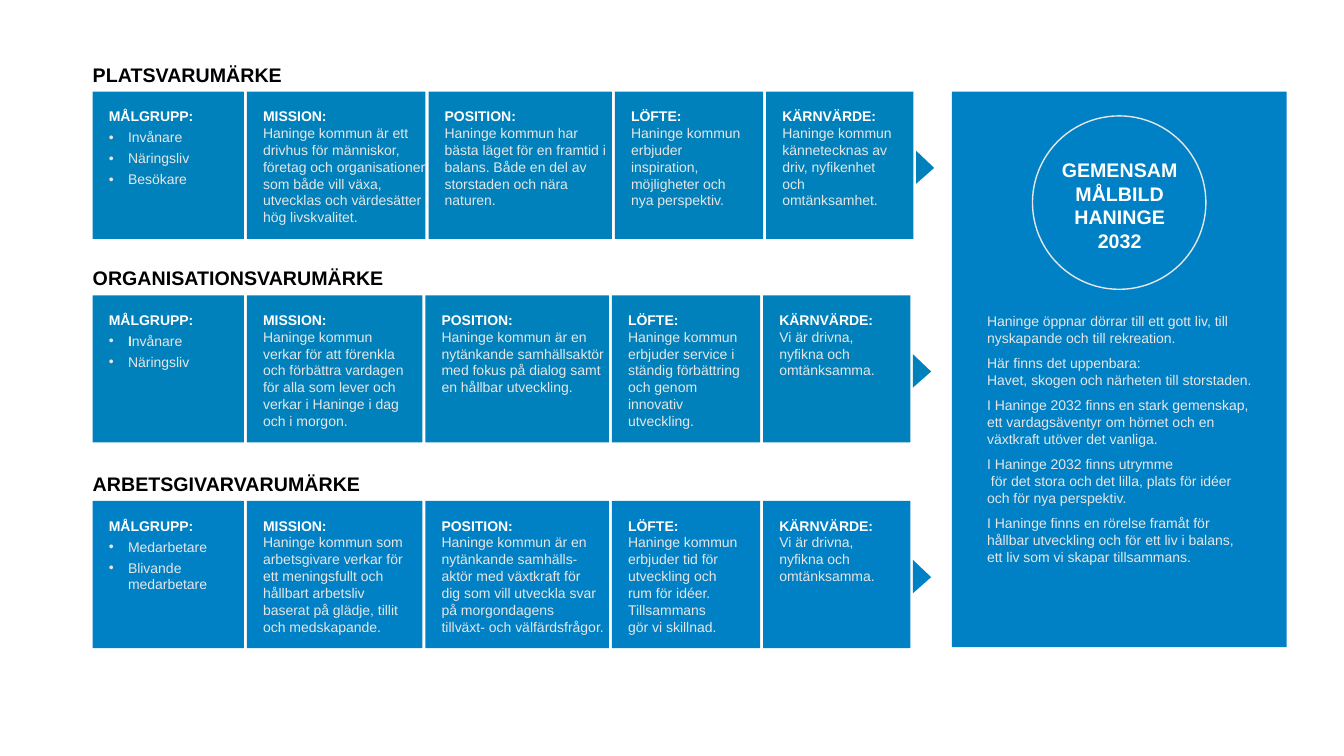
from dataclasses import dataclass

from lxml.etree import SubElement
from pptx import Presentation
from pptx.dml.color import RGBColor
from pptx.enum.shapes import MSO_SHAPE as Shape
from pptx.enum.text import MSO_ANCHOR as Anchor, MSO_AUTO_SIZE as AutoSize, PP_ALIGN as Align
from pptx.oxml.ns import qn
from pptx.util import Emu, Pt

PX = 9144  # 100 px to the inch
FONT = "Arial"
BLUE = RGBColor(0x00, 0x81, 0xBB)
BRIGHT_BLUE = RGBColor(0x00, 0x81, 0xC5)
WHITE = RGBColor(0xFF, 0xFF, 0xFF)
BLACK = RGBColor(0x00, 0x00, 0x00)
PALE = RGBColor(0xE7, 0xE6, 0xE6)

LEFT, GAP, CARD_HEIGHT, PAD, NARROW_PAD = 92, 3, 146, 16, 4
CARD_WIDTHS = (150, 174, 182, 147, 146)
LABELS = ("MISSION:", "POSITION:", "LÖFTE:", "KÄRNVÄRDE:")


@dataclass
class Brand:
    name: str
    top: int
    color: RGBColor
    audiences: tuple[str, ...]
    statements: tuple[str, str, str, str]
    mission_width: int = CARD_WIDTHS[1]
    mission_pad: int = PAD
    bold_initial: bool = False


BRANDS = (
    Brand(
        "PLATSVARUMÄRKE", 91, BLUE, ("Invånare", "Näringsliv", "Besökare"),
        ("Haninge kommun är ett drivhus för människor, företag och organisationer "
         "som både vill växa, utvecklas och värdesätter hög livskvalitet.",
         "Haninge kommun har bästa läget för en framtid i balans. "
         "Både en del av storstaden och nära naturen.",
         "Haninge kommun erbjuder inspiration, möjligheter och nya perspektiv.",
         "Haninge kommun kännetecknas av driv, nyfikenhet och omtänksamhet."),
        mission_width=177, mission_pad=0,
    ),
    Brand(
        "ORGANISATIONSVARUMÄRKE", 293, BLUE, ("Invånare", "Näringsliv"),
        ("Haninge kommun verkar för att förenkla och förbättra vardagen "
         "för alla som lever och verkar i Haninge i dag och i morgon.",
         "Haninge kommun är en nytänkande samhällsaktör med fokus på dialog "
         "samt en hållbar utveckling.",
         "Haninge kommun erbjuder service i ständig förbättring och genom "
         "innovativ utveckling.",
         "Vi är drivna, nyfikna och omtänksamma."),
        bold_initial=True,
    ),
    Brand(
        "ARBETSGIVARVARUMÄRKE", 497, BRIGHT_BLUE, ("Medarbetare", "Blivande medarbetare"),
        ("Haninge kommun som arbetsgivare verkar för ett meningsfullt och "
         "hållbart arbetsliv baserat på glädje, tillit och medskapande.",
         "Haninge kommun är en nytänkande samhälls- aktör med växtkraft för\n"
         "dig som vill utveckla svar på morgondagens\ntillväxt- och välfärdsfrågor.",
         "Haninge kommun erbjuder tid för utveckling och\nrum för idéer. Tillsammans\n"
         "gör vi skillnad.",
         "Vi är drivna, nyfikna och omtänksamma."),
    ),
)

VISION = (
    "Haninge öppnar dörrar till ett gott liv, till nyskapande och till rekreation.",
    "Här finns det uppenbara:\nHavet, skogen och närheten till storstaden.",
    "I Haninge 2032 finns en stark gemenskap, ett vardagsäventyr om hörnet "
    "och en växtkraft utöver det vanliga.",
    "I Haninge 2032 finns utrymme\n för det stora och det lilla, plats för idéer\n"
    "och för nya perspektiv.",
    "I Haninge finns en rörelse framåt för\nhållbar utveckling och för ett liv i balans,\n"
    "ett liv som vi skapar tillsammans.",
)


def area(*lengths: int) -> list[Emu]:
    return [Emu(length * PX) for length in lengths]


def style(font, size: int, color: RGBColor, bold: bool = False) -> None:
    font.name, font.size, font.bold = FONT, Pt(size), bold
    font.color.rgb = color


def set_margins(frame, left: int, top: int, right: int, bottom: int) -> None:
    (frame.margin_left, frame.margin_top,
     frame.margin_right, frame.margin_bottom) = area(left, top, right, bottom)


def add_filled(page, kind: Shape, place: list[Emu], color: RGBColor):
    shape = page.shapes.add_shape(kind, *place)
    shape.shadow.inherit = False
    shape.fill.solid()
    shape.fill.fore_color.rgb = color
    shape.line.fill.background()
    return shape


def add_paras(frame, texts: tuple[str, ...], size: int, color: RGBColor, bold: bool = False,
              align: Align = Align.LEFT, after: int = 0) -> None:
    for index, text in enumerate(texts):
        para = frame.add_paragraph() if index else frame.paragraphs[0]
        para.text = text
        para.alignment = align
        para.space_after = Pt(after)
        style(para.font, size, color, bold)


def add_text(page, place: list[Emu], texts: tuple[str, ...], size: int, color: RGBColor,
             margins: tuple[int, int, int, int] = (0, 0, 0, 0), **options) -> None:
    frame = page.shapes.add_textbox(*place).text_frame
    frame.word_wrap = True
    frame.auto_size = AutoSize.SHAPE_TO_FIT_TEXT
    set_margins(frame, *margins)
    add_paras(frame, texts, size, color, **options)


def add_bullet(para) -> None:
    props = para._p.get_or_add_pPr()
    props.set("marL", str(19 * PX))
    props.set("indent", str(-19 * PX))
    SubElement(props, qn("a:buFont")).set("typeface", FONT)
    SubElement(props, qn("a:buChar")).set("char", "•")


def add_card(page, left: int, width: int, brand: Brand, label: str, right_pad: int):
    """Draw one card with its label and return its text frame."""
    card = add_filled(page, Shape.RECTANGLE, area(left, brand.top, width, CARD_HEIGHT), brand.color)
    frame = card.text_frame
    frame.word_wrap = True
    frame.vertical_anchor = Anchor.TOP
    set_margins(frame, PAD, PAD, right_pad, 0)
    para = frame.paragraphs[0]
    para.alignment = Align.LEFT
    para.space_after = Pt(3)
    style(para.font, 10, PALE)
    span = para.add_run()
    span.text = label
    style(span.font, 10, WHITE, bold=True)
    return frame


def add_audiences(frame, brand: Brand) -> None:
    for index, audience in enumerate(brand.audiences):
        para = frame.add_paragraph()
        add_bullet(para)
        para.alignment = Align.LEFT
        para.space_after = Pt(3)
        style(para.font, 10, PALE)
        if brand.bold_initial and index == 0:
            initial = para.add_run()
            initial.text, audience = audience[0], audience[1:]
            initial.font.bold = True
        para.add_run().text = audience


def add_statement(frame, statement: str) -> None:
    para = frame.paragraphs[0]
    for line in statement.split("\n"):
        para.add_line_break()
        para.add_run().text = line


def add_brand(page, brand: Brand) -> None:
    add_text(page, area(LEFT, brand.top - 29, 364, 24), (brand.name,), 14, BLACK, bold=True)
    audience_width, _, *other_widths = CARD_WIDTHS
    add_audiences(add_card(page, LEFT, audience_width, brand, "MÅLGRUPP:", PAD), brand)
    left = LEFT + audience_width + GAP
    widths = (brand.mission_width, *other_widths)
    pads = (brand.mission_pad, NARROW_PAD, PAD, PAD)
    for label, statement, width, pad in zip(LABELS, brand.statements, widths, pads):
        add_statement(add_card(page, left, width, brand, label, pad), statement)
        left += width + GAP
    # Arrow towards the shared vision
    arrow = add_filled(page, Shape.ISOSCELES_TRIANGLE,
                       area(left - GAP - 5, brand.top + 66, 33, 18), brand.color)
    arrow.adjustments[0] = 0.52
    arrow.rotation = 90


def add_vision(page) -> None:
    add_filled(page, Shape.RECTANGLE, area(944, 91, 332, 551), BRIGHT_BLUE)
    circle = add_filled(page, Shape.OVAL, area(1024, 115, 172, 172), BRIGHT_BLUE)
    circle.fill.background()
    circle.line.color.rgb = PALE
    circle.line.width = Pt(1)
    add_text(page, area(1026, 152, 169, 104), ("GEMENSAM\nMÅLBILD", "HANINGE\n2032"), 14, WHITE,
             margins=(10, 5, 10, 5), bold=True, align=Align.CENTER)
    add_text(page, area(979, 310, 277, 252), VISION, 10, PALE, after=6)


def main() -> None:
    deck = Presentation()
    deck.slide_width, deck.slide_height = area(1333, 750)
    page = deck.slides.add_slide(deck.slide_layouts[6])
    add_vision(page)
    for brand in BRANDS:
        add_brand(page, brand)
    deck.save("out.pptx")


if __name__ == "__main__":
    main()
